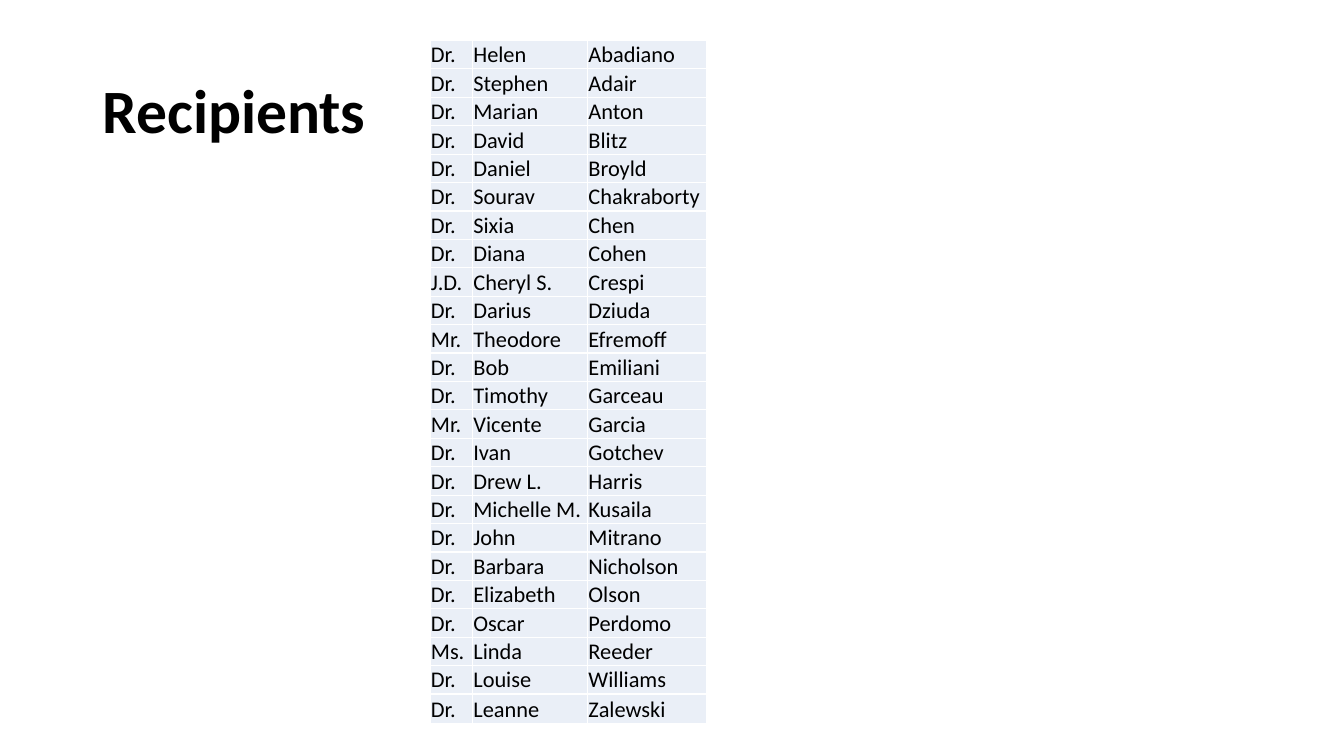
"""Build the slide that lists the recipients in a three-column table."""
from lxml import etree
from pptx import Presentation
from pptx.dml import color
from pptx.enum import text
from pptx.oxml import ns
from pptx.util import Cm, Pt

TITLE = "Recipients"
PEOPLE = [
    ("Dr.", "Helen", "Abadiano"),
    ("Dr.", "Stephen", "Adair"),
    ("Dr.", "Marian", "Anton"),
    ("Dr.", "David", "Blitz"),
    ("Dr.", "Daniel", "Broyld"),
    ("Dr.", "Sourav", "Chakraborty"),
    ("Dr.", "Sixia", "Chen"),
    ("Dr.", "Diana", "Cohen"),
    ("J.D.", "Cheryl S.", "Crespi"),
    ("Dr.", "Darius", "Dziuda"),
    ("Mr.", "Theodore", "Efremoff"),
    ("Dr.", "Bob", "Emiliani"),
    ("Dr.", "Timothy", "Garceau"),
    ("Mr.", "Vicente", "Garcia"),
    ("Dr.", "Ivan", "Gotchev"),
    ("Dr.", "Drew L.", "Harris"),
    ("Dr.", "Michelle M.", "Kusaila"),
    ("Dr.", "John", "Mitrano"),
    ("Dr.", "Barbara", "Nicholson"),
    ("Dr.", "Elizabeth", "Olson"),
    ("Dr.", "Oscar", "Perdomo"),
    ("Ms.", "Linda", "Reeder"),
    ("Dr.", "Louise", "Williams"),
    ("Dr.", "Leanne", "Zalewski"),
]
WIDTHS = (1.07, 2.9, 3.0)
LEFT, TOP, HEIGHT, LAST = 10.84, 1.02, 17.22, 0.75
HEAD = {"left": Cm(2.33), "top": Cm(1.01), "width": Cm(29.21), "height": Cm(3.68)}
CELL = {
    "margin_left": Cm(0.02), "margin_right": Cm(0.02),
    "margin_top": Cm(0.02), "margin_bottom": 0,
    "vertical_anchor": text.MSO_ANCHOR.BOTTOM,
}
BANDS = {"first_row": False, "horz_banding": False}


def put(item, form):
    for key, val in form.items():
        setattr(item, key, val)


def paint(target, code):
    target.rgb = color.RGBColor.from_string(code)


def style(para, size, bold):
    put(para.font, {"name": "Calibri", "size": Pt(size), "bold": bold})
    paint(para.font.color, "000000")


def edge(cell):
    props = cell._tc.get_or_add_tcPr()
    for side in ("lnL", "lnR", "lnT", "lnB"):
        line = etree.SubElement(props, ns.qn("a:" + side), w=str(Pt(1)))
        fill = etree.SubElement(line, ns.qn("a:solidFill"))
        etree.SubElement(fill, ns.qn("a:srgbClr"), val="FFFFFF")


def add_title(slide):
    title = slide.shapes.title
    put(title, HEAD)
    frame = title.text_frame
    put(frame, {"text": TITLE, "vertical_anchor": text.MSO_ANCHOR.MIDDLE})
    para = frame.paragraphs[0]
    put(para, {"alignment": text.PP_ALIGN.LEFT, "line_spacing": 0.9})
    style(para, 44, True)


def add_list(slide):
    count = len(PEOPLE)
    table = slide.shapes.add_table(
        count, len(WIDTHS), Cm(LEFT), Cm(TOP), Cm(sum(WIDTHS)), Cm(HEIGHT)
    ).table
    put(table, BANDS)
    for col, width in zip(table.columns, WIDTHS):
        col.width = Cm(width)
    for row in table.rows:
        row.height = Cm((HEIGHT - LAST) / (count - 1))
    table.rows[count - 1].height = Cm(LAST)
    for row, person in zip(table.rows, PEOPLE):
        for cell, word in zip(row.cells, person):
            put(cell, {"text": word, **CELL})
            edge(cell)
            cell.fill.solid()
            paint(cell.fill.fore_color, "EAEFF7")
            style(cell.text_frame.paragraphs[0], 16, False)


def main():
    deck = Presentation()
    put(deck, {"slide_width": Cm(33.87), "slide_height": Cm(19.05)})
    slide = deck.slides.add_slide(deck.slide_layouts[5])
    add_title(slide)
    add_list(slide)
    deck.save("out.pptx")


if __name__ == "__main__":
    main()
